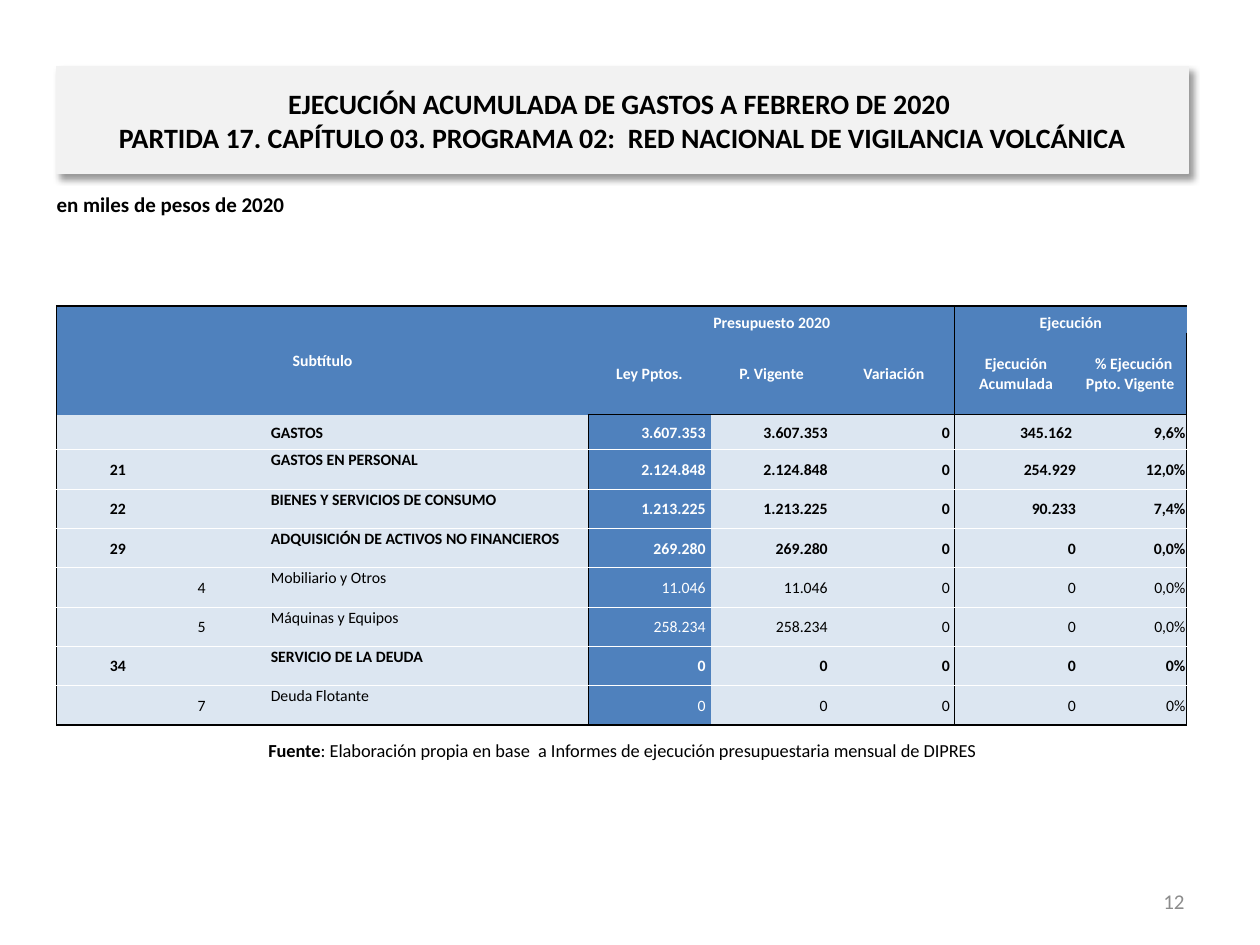
from lxml import etree
from pptx import Presentation
from pptx.dml.color import RGBColor
from pptx.enum.shapes import MSO_SHAPE
from pptx.enum.text import MSO_ANCHOR, PP_ALIGN
from pptx.oxml.ns import qn
from pptx.util import Inches, Pt

LEFT, CENTER, RIGHT = PP_ALIGN.LEFT, PP_ALIGN.CENTER, PP_ALIGN.RIGHT
TOP, MIDDLE, BOTTOM = MSO_ANCHOR.TOP, MSO_ANCHOR.MIDDLE, MSO_ANCHOR.BOTTOM
RECTANGLE = MSO_SHAPE.RECTANGLE

BLACK, WHITE, GRAY, PALE_GRAY = "000000", "FFFFFF", "8C8C8C", "F2F2F2"
BLUE, PALE_BLUE = "4F81BD", "DCE6F1"

# The slide is a grid of 100 columns by 75 rows
GRID_COLUMNS, GRID_ROWS = 100, 75

COLUMN_WIDTHS = [9.7, 3.6, 3.6, 25.3, 9.7, 9.7, 9.7, 9.7, 8.7]
HEADER_HEIGHTS, TOTAL_HEIGHT, ITEM_HEIGHT = [2.1, 6.5], 2.8, 3.12
GROUPS = [  # first row, first column, last row, last column, text, anchor
    (0, 0, 1, 3, "Subtítulo", MIDDLE),
    (0, 4, 0, 6, "Presupuesto 2020", BOTTOM),
    (0, 7, 0, 8, "Ejecución", BOTTOM),
]
HEADINGS = ["Ley Pptos.", "P. Vigente", "Variación", "Ejecución Acumulada",
            " % Ejecución Ppto. Vigente "]
ITEMS = [  # subtitle, item, name, approved and current budget, spent, share
    ("", "", "GASTOS", "3.607.353", "345.162", "9,6%"),
    ("21", "", "GASTOS EN PERSONAL", "2.124.848", "254.929", "12,0%"),
    ("22", "", "BIENES Y SERVICIOS DE CONSUMO", "1.213.225", "90.233", "7,4%"),
    ("29", "", "ADQUISICIÓN DE ACTIVOS NO FINANCIEROS", "269.280", "0", "0,0%"),
    ("", "4", "Mobiliario y Otros", "11.046", "0", "0,0%"),
    ("", "5", "Máquinas y Equipos", "258.234", "0", "0,0%"),
    ("34", "", "SERVICIO DE LA DEUDA", "0", "0", "0%"),
    ("", "7", "Deuda Flotante", "0", "0", "0%"),
]
ALIGNS = [CENTER] * 3 + [LEFT] + [RIGHT] * 5


def color(value):
    return RGBColor.from_string(value)


class Sheet:
    """Style and current slide, with one method for each kind of element."""

    font = "Calibri"

    def __init__(self, deck):
        self.page = deck.slides.add_slide(deck.slide_layouts[6])
        self.column = deck.slide_width / GRID_COLUMNS
        self.row = deck.slide_height / GRID_ROWS

    def place(self, x, y, width, height):
        return (round(x * self.column), round(y * self.row),
                round(width * self.column), round(height * self.row))

    def add_span(self, para, text, size, bold=False, ink=BLACK):
        span = para.add_run()
        span.text = text
        span.font.name, span.font.size, span.font.bold = self.font, Pt(size), bold
        span.font.color.rgb = color(ink)

    def text(self, area, spans, size, align=LEFT, anchor=TOP, ink=BLACK):
        frame = self.page.shapes.add_textbox(*self.place(*area)).text_frame
        frame.word_wrap = True
        frame.vertical_anchor = anchor
        para = frame.paragraphs[0]
        para.alignment = align
        for words, bold in spans:
            self.add_span(para, words, size, bold, ink)

    def banner(self, area, lines, size):
        box = self.page.shapes.add_shape(RECTANGLE, *self.place(*area))
        box.fill.solid()
        box.fill.fore_color.rgb = color(PALE_GRAY)
        box.line.color.rgb = color(PALE_GRAY)
        box.line.width = Pt(0.75)
        self.drop_shadow(box)
        frame = box.text_frame
        frame.word_wrap = True
        frame.vertical_anchor = MIDDLE
        para = frame.paragraphs[0]
        para.alignment = CENTER
        for number, line in enumerate(lines):
            if number:
                para.add_line_break()
            self.add_span(para, line, size, True)

    def drop_shadow(self, box):
        box.shadow.inherit = False
        effects = box._element.spPr.find(qn("a:effectLst"))
        shadow = etree.SubElement(effects, qn("a:outerShdw"), blurRad=str(Pt(4)),
                                  dist=str(Pt(3)), dir=str(45 * 60000))
        ink = etree.SubElement(shadow, qn("a:srgbClr"), val=BLACK)
        etree.SubElement(ink, qn("a:alpha"), val="40000")

    def table(self, area, widths, heights):
        grid = self.page.shapes.add_table(
            len(heights), len(widths), *self.place(*area)).table
        grid.first_row = grid.horz_banding = False
        for column, width in zip(grid.columns, widths):
            column.width = round(width * self.column)
        for row, height in zip(grid.rows, heights):
            row.height = round(height * self.row)
        return grid

    def frame_cell(self, cell, edges, fill):
        props = cell._tc.get_or_add_tcPr()
        for side, edge in zip("LRTB", edges):
            line = etree.SubElement(props, qn(f"a:ln{side}"))
            if edge:
                ink, width = edge
                line.set("w", str(Pt(width)))
                solid = etree.SubElement(line, qn("a:solidFill"))
                etree.SubElement(solid, qn("a:srgbClr"), val=ink)
            else:
                etree.SubElement(line, qn("a:noFill"))
        cell.fill.solid()
        cell.fill.fore_color.rgb = color(fill)
        cell.margin_left = cell.margin_right = cell.margin_top = Inches(0.01)
        cell.margin_bottom = 0
        # Keeps empty cells from growing their row
        etree.SubElement(cell.text_frame.paragraphs[0]._p,
                         qn("a:endParaRPr"), sz="900")

    def fill_cell(self, cell, text, align, anchor=MIDDLE, bold=True, ink=BLACK):
        cell.vertical_anchor = anchor
        para = cell.text_frame.paragraphs[0]
        para.alignment = align
        if text:
            self.add_span(para, text, 9, bold, ink)


def add_budget(sheet):
    heights = HEADER_HEIGHTS + [TOTAL_HEIGHT] + [ITEM_HEIGHT] * (len(ITEMS) - 1)
    grid = sheet.table((4.5, 24.3, sum(COLUMN_WIDTHS), sum(heights)),
                       COLUMN_WIDTHS, heights)
    first, last = len(HEADER_HEIGHTS), len(heights)

    # Lines between columns and between rows
    thin, thick = (BLACK, 0.5), (BLACK, 1)
    uprights = {0: thick, 4: thin, 7: thin, len(COLUMN_WIDTHS): thick}
    levels = {row: (WHITE, 0.5) for row in range(first + 1, last)}
    levels.update({0: thick, first: thin, last: thick})
    for row in range(last):
        for column in range(len(COLUMN_WIDTHS)):
            edges = (uprights.get(column), uprights.get(column + 1),
                     levels.get(row), levels.get(row + 1))
            fill = BLUE if row < first or column == 4 else PALE_BLUE
            sheet.frame_cell(grid.cell(row, column), edges, fill)

    # Header
    for top, left, bottom, right, text, anchor in GROUPS:
        cell = grid.cell(top, left)
        cell.merge(grid.cell(bottom, right))
        sheet.fill_cell(cell, text, CENTER, anchor, ink=WHITE)
    for column, text in enumerate(HEADINGS, 4):
        sheet.fill_cell(grid.cell(1, column), text, CENTER, ink=WHITE)

    # Body: the total, then subtitles in bold and their items in regular
    for row, (subtitle, item, name, budget, spent, share) in enumerate(ITEMS, first):
        values = [subtitle, item, "", name, budget, budget, "0", spent, share]
        for column, (text, align) in enumerate(zip(values, ALIGNS)):
            cell = grid.cell(row, column)
            anchor = TOP if column == 3 and row > first else MIDDLE
            sheet.fill_cell(cell, text, align, anchor, not item,
                            WHITE if column == 4 else BLACK)
            if column in (4, 5, 6) or (column == 7 and row == first):
                cell.margin_right = Inches(0.04)


def main():
    deck = Presentation()
    deck.slide_width, deck.slide_height = Inches(10), Inches(7.5)
    sheet = Sheet(deck)

    # Source note and page number
    sheet.text((4.5, 58, 89.8, 3.1), [
        ("Fuente", True),
        (": Elaboración propia en base  a Informes de ejecución "
         "presupuestaria mensual de DIPRES", False),
    ], 10.5, CENTER, MIDDLE)
    sheet.text((71.7, 69.5, 23.3, 4), [("12", False)], 12, RIGHT, MIDDLE, GRAY)

    # Unit and title
    sheet.text((3.5, 14.7, 81.9, 3.9), [("en miles de pesos de 2020", True)], 12)
    sheet.banner((4.5, 5.3, 89.8, 8.5), [
        "EJECUCIÓN ACUMULADA DE GASTOS A FEBRERO DE 2020 ",
        "PARTIDA 17. CAPÍTULO 03. PROGRAMA 02:  RED NACIONAL DE VIGILANCIA VOLCÁNICA",
    ], 16)

    add_budget(sheet)
    deck.save("out.pptx")


if __name__ == "__main__":
    main()
